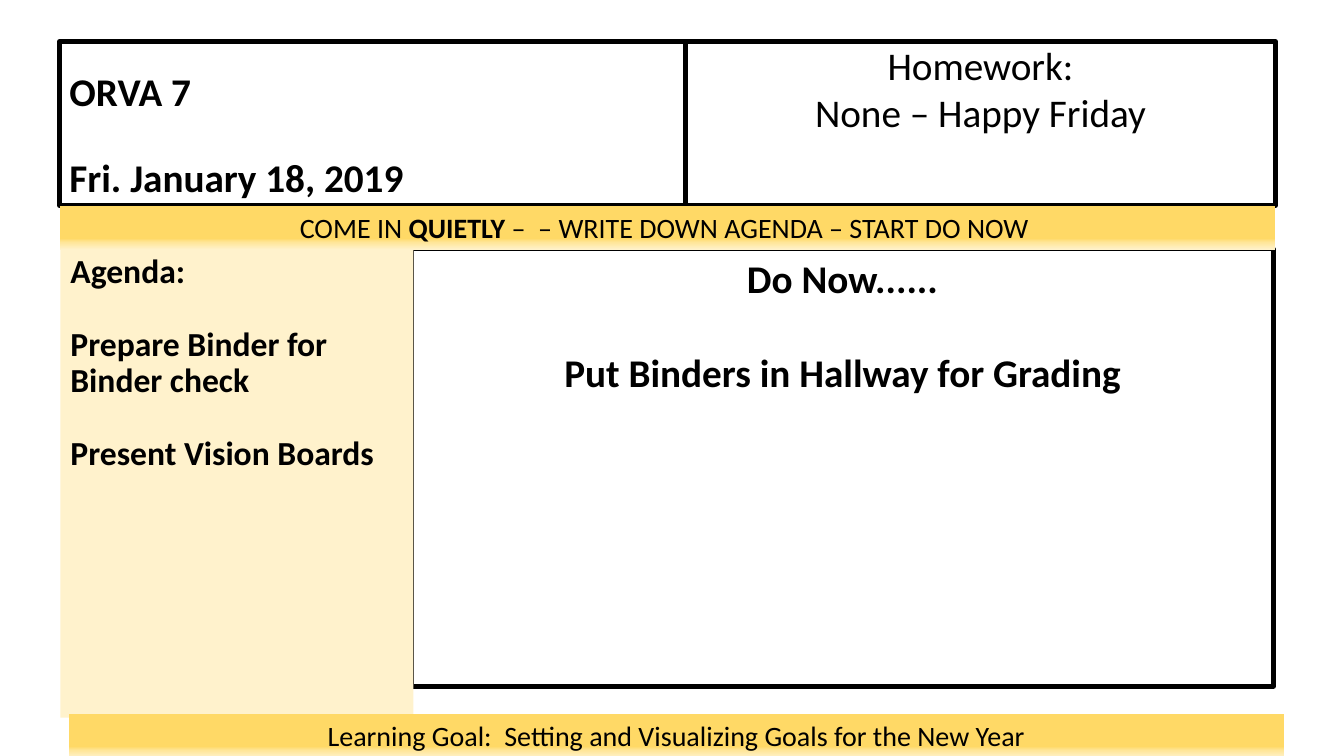
from copy import deepcopy
from dataclasses import dataclass

from pptx import Presentation
from pptx.dml.color import RGBColor
from pptx.enum.shapes import MSO_SHAPE
from pptx.enum.text import MSO_ANCHOR, PP_ALIGN
from pptx.util import Inches, Pt

COLORS = {"ink": "000000", "gold": "FFD966", "sand": "FFE699", "cream": "FFF2CC"}
BAND_STOPS = ((0, "gold"), (0.74, "gold"), (0.83, "sand"), (1, "cream"))

# Horizontal lengths are percent of slide width, vertical ones of slide height.
LEFT, FULL_WIDTH = 4.43, 90.47
HEADER_TOP, HEADER_HEIGHT = 5.47, 21.73
BAND_TOP, BAND_HEIGHT = HEADER_TOP + HEADER_HEIGHT, 5.87
AGENDA_TOP = BAND_TOP + BAND_HEIGHT
HOMEWORK_LEFT = 51.01


@dataclass
class Line:
    spans: tuple[str, ...]
    gap: float = 0
    bold_span: int | None = None
    spacing: float = 1.0


@dataclass
class Panel:
    left: float
    top: float
    width: float
    height: float
    lines: tuple[Line, ...]
    size: int
    fill: str | None = None
    outlined: bool = False
    bold: bool = False
    align: PP_ALIGN = PP_ALIGN.CENTER
    anchor: MSO_ANCHOR = MSO_ANCHOR.TOP


def tight(text: str, gap: float = 0) -> Line:
    return Line((text,), gap, spacing=0.9)


def band(left: float, top: float, line: Line) -> Panel:
    return Panel(left, top, FULL_WIDTH, BAND_HEIGHT, (line,), 20, fill="band")


PANELS = (
    Panel(LEFT, HEADER_TOP, HOMEWORK_LEFT - LEFT, HEADER_HEIGHT,
          (tight("ORVA 7"), tight("Fri. January 18, 2019", gap=30.8)),
          28, outlined=True, bold=True, align=PP_ALIGN.LEFT,
          anchor=MSO_ANCHOR.BOTTOM),
    Panel(HOMEWORK_LEFT, HEADER_TOP, LEFT + FULL_WIDTH - HOMEWORK_LEFT, HEADER_HEIGHT,
          (tight("Homework:"), Line(("None – Happy Friday",))),
          28, outlined=True),
    Panel(30.61, 32.93, 64.14, 57.87,
          (Line(("Do Now......",)),
           Line(("Put Binders in Hallway for Grading",), gap=33.6)),
          28, outlined=True, bold=True),
    band(LEFT, BAND_TOP,
         Line(("COME IN ", "QUIETLY", " –  – WRITE DOWN AGENDA – START DO NOW "),
              bold_span=1)),
    Panel(4.5, AGENDA_TOP, 26.26, 61.87,
          (tight("Agenda:"),
           tight("Prepare Binder for Binder check", gap=26),
           tight("Present Vision Boards", gap=26)),
          24, fill="cream", bold=True, align=PP_ALIGN.LEFT),
    band(5.1, 94.4,
         Line(("Learning Goal:  Setting and Visualizing Goals for the New Year",))),
)


def rgb(name: str) -> RGBColor:
    return RGBColor.from_string(COLORS[name])


def assign(target, values: dict) -> None:
    for name, value in values.items():
        setattr(target, name, value)


def paint_band(fill) -> None:
    """Fill with the gold gradient, running from top to bottom."""
    fill.gradient()
    fill.gradient_angle = 270
    stop_list = fill._fill._gradFill.gsLst
    for _ in range(len(BAND_STOPS) - len(stop_list)):
        stop_list.append(deepcopy(stop_list[0]))
    for stop, (position, color) in zip(fill.gradient_stops, BAND_STOPS):
        stop.position = position
        stop.color.rgb = rgb(color)


def write_lines(frame, panel: Panel) -> None:
    assign(frame, {"word_wrap": True, "vertical_anchor": panel.anchor})
    for index, line in enumerate(panel.lines):
        para = frame.add_paragraph() if index else frame.paragraphs[0]
        assign(para, {"alignment": panel.align, "line_spacing": line.spacing,
                      "space_before": Pt(line.gap)})
        for number, text in enumerate(line.spans):
            span = para.add_run()
            span.text = text
            assign(span.font, {"name": "Calibri", "size": Pt(panel.size),
                               "bold": panel.bold or number == line.bold_span})
            span.font.color.rgb = rgb("ink")


def draw_panel(deck, page, panel: Panel) -> None:
    box = page.shapes.add_shape(
        MSO_SHAPE.RECTANGLE,
        round(deck.slide_width * panel.left / 100),
        round(deck.slide_height * panel.top / 100),
        round(deck.slide_width * panel.width / 100),
        round(deck.slide_height * panel.height / 100))
    box.shadow.inherit = False
    if panel.fill == "band":
        paint_band(box.fill)
    elif panel.fill:
        box.fill.solid()
        box.fill.fore_color.rgb = rgb(panel.fill)
    else:
        box.fill.background()
    if panel.outlined:
        box.line.color.rgb = rgb("ink")
        box.line.width = Pt(3.25)
    else:
        box.line.fill.background()
    write_lines(box.text_frame, panel)


def main() -> None:
    deck = Presentation()
    assign(deck, {"slide_width": Inches(13.33), "slide_height": Inches(7.5)})
    page = deck.slides.add_slide(deck.slide_layouts[6])
    for panel in PANELS:
        draw_panel(deck, page, panel)
    deck.save("out.pptx")


if __name__ == "__main__":
    main()
